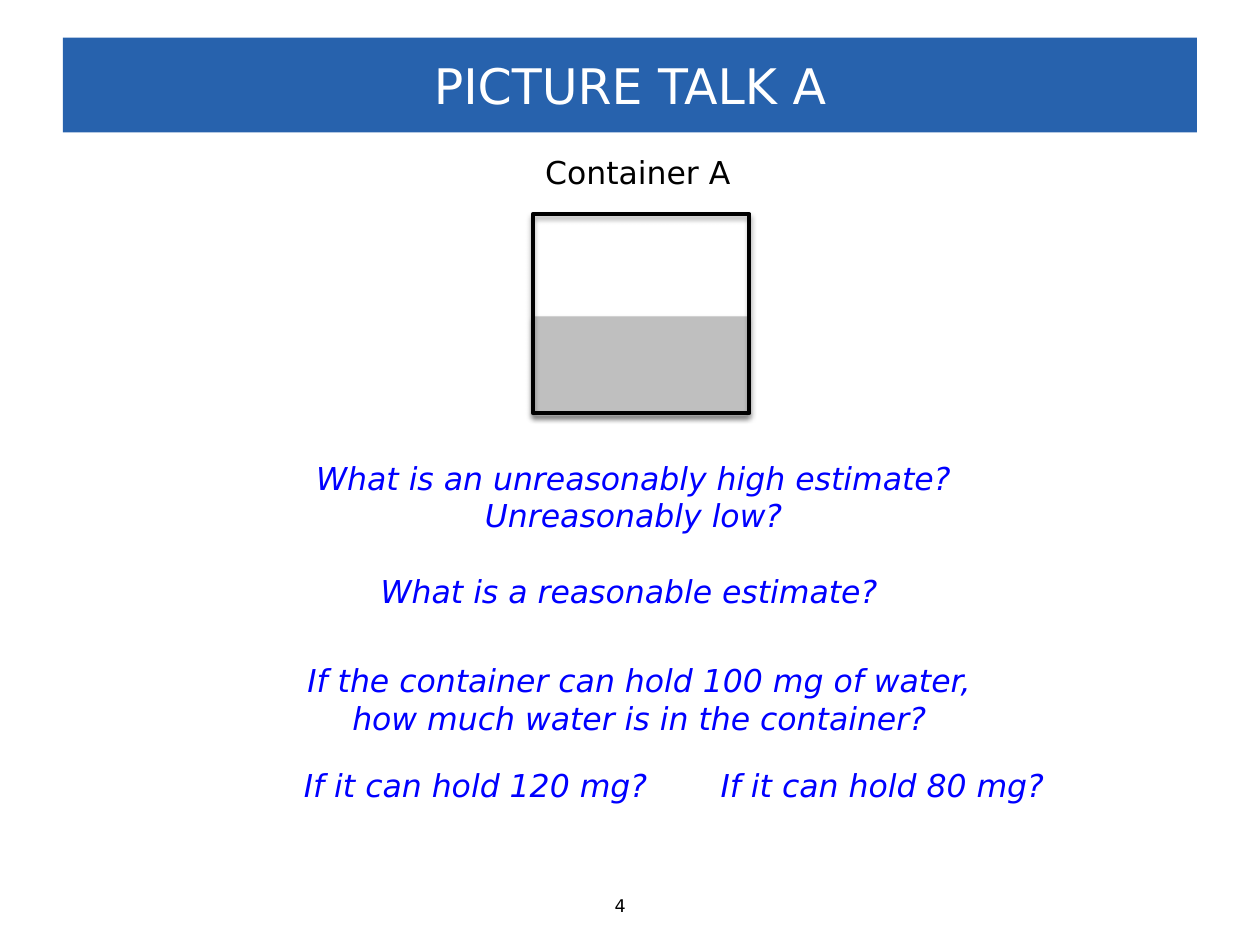
from lxml import etree
from pptx import Presentation
from pptx.dml.color import RGBColor
from pptx.enum.shapes import MSO_SHAPE
from pptx.enum.text import MSO_ANCHOR, PP_ALIGN
from pptx.oxml.ns import qn
from pptx.util import Cm, Pt

RECTANGLE = MSO_SHAPE.RECTANGLE
MIDDLE = MSO_ANCHOR.MIDDLE
LEFT, CENTER = PP_ALIGN.LEFT, PP_ALIGN.CENTER

FONT = "DejaVu Sans"
BLACK, WHITE, BLUE = "000000", "FFFFFF", "0000FF"
BANNER_BLUE, WATER_GREY = "2762AD", "BFBFBF"

# Content: places are left, top, width, height in cm
TITLE = ("PICTURE TALK A", (1.27, 0.76, 22.86, 1.91))
CAPTION = ("Container A", (10.74, 2.97, 4.29, 1.02))
PAGE_NUMBER = ("4", (12.14, 17.91, 1.12, 0.69))
WATER = (10.74, 6.38, 4.34, 2.01)
CONTAINER = (10.74, 4.32, 4.37, 4.01)
QUESTIONS = [
    ("What is an unreasonably high estimate? Unreasonably low?", (6.07, 9.12, 13.41, 1.8)),
    ("What is a reasonable estimate?", (7.39, 11.4, 10.59, 1.02)),
    ("If the container can hold 100 mg of water, how much water is in the container?",
     (5.74, 13.21, 14.3, 1.8)),
    ("If it can hold 120 mg?", (5.74, 15.32, 7.7, 1.02)),
    ("If it can hold 80 mg?", (13.94, 15.32, 7.7, 1.02)),
]


def color(value):
    return RGBColor.from_string(value)


def write(frame, text, size, ink, align=LEFT, italic=False):
    paragraph = frame.paragraphs[0]
    paragraph.alignment = align
    run = paragraph.add_run()
    run.text = text
    run.font.name = FONT
    run.font.size = Pt(size)
    run.font.italic = italic
    run.font.color.rgb = color(ink)


def add_text(slide, text, place, size, ink, wrap=False, **style):
    frame = slide.shapes.add_textbox(*map(Cm, place)).text_frame
    frame.word_wrap = wrap
    write(frame, text, size, ink, **style)


def add_rectangle(slide, place, fill=None, outline=None):
    rectangle = slide.shapes.add_shape(RECTANGLE, *map(Cm, place))
    rectangle.shadow.inherit = False
    if fill:
        rectangle.fill.solid()
        rectangle.fill.fore_color.rgb = color(fill)
    else:
        rectangle.fill.background()
    if outline:
        rectangle.line.color.rgb = color(outline)
        rectangle.line.width = Pt(2.25)
    else:
        rectangle.line.fill.background()
    return rectangle


def add_shadow(shape):
    effects = shape.element.spPr.find(qn("a:effectLst"))
    shadow = etree.SubElement(effects, qn("a:outerShdw"), blurRad=str(Pt(3.1)),
                              dist=str(Pt(1.8)), dir="5400000", rotWithShape="0")
    tint = etree.SubElement(shadow, qn("a:srgbClr"), val=BLACK)
    etree.SubElement(tint, qn("a:alpha"), val="35000")


def main():
    deck = Presentation()
    deck.slide_width, deck.slide_height = Cm(25.4), Cm(19.05)
    slide = deck.slides.add_slide(deck.slide_layouts[6])

    # Title banner
    title, place = TITLE
    banner = add_rectangle(slide, place, fill=BANNER_BLUE)
    banner.text_frame.word_wrap = True
    banner.text_frame.vertical_anchor = MIDDLE
    write(banner.text_frame, title, 28, WHITE, align=CENTER)

    # Container with water
    add_text(slide, *CAPTION, 18, BLACK)
    add_shadow(add_rectangle(slide, WATER, fill=WATER_GREY))
    add_shadow(add_rectangle(slide, CONTAINER, outline=BLACK))

    # Questions
    for question, place in QUESTIONS:
        add_text(slide, question, place, 18, BLUE, wrap=True, align=CENTER, italic=True)

    # Page number
    add_text(slide, *PAGE_NUMBER, 10, BLACK)

    deck.save("out.pptx")


if __name__ == "__main__":
    main()
